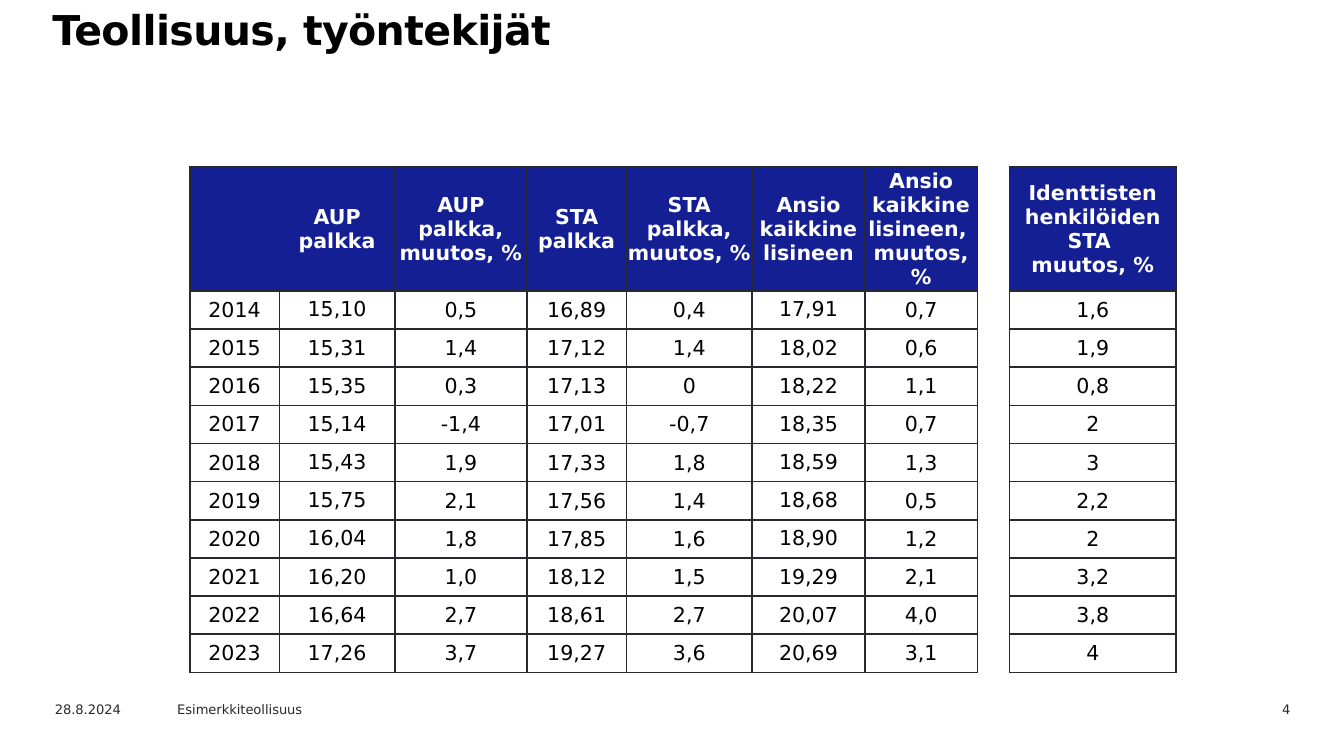
from dataclasses import dataclass

from lxml import etree
from pptx import Presentation
from pptx.dml.color import RGBColor
from pptx.enum.text import MSO_ANCHOR, MSO_AUTO_SIZE, PP_ALIGN
from pptx.oxml.ns import qn
from pptx.util import Emu, Inches, Pt

LEFT, CENTER, RIGHT = PP_ALIGN.LEFT, PP_ALIGN.CENTER, PP_ALIGN.RIGHT
TOP, MIDDLE = MSO_ANCHOR.TOP, MSO_ANCHOR.MIDDLE
NO_AUTOFIT = MSO_AUTO_SIZE.NONE

SLIDE_WIDTH = Inches(10)
SLIDE_HEIGHT = Emu(SLIDE_WIDTH * 9 // 16)
TITLE_ONLY = 5
FONT = "DejaVu Sans"
BLACK, WHITE, NAVY, GRAPHITE = "000000", "FFFFFF", "141F94", "29282E"
LINE_WIDTH = Pt(1)
TABLE_SIZE = Pt(11)
THIN_MARGIN = Pt(0.5)


@dataclass
class Frame:
    """A place on the slide, in percent of its width and height."""
    left: float
    top: float
    width: float
    height: float


@dataclass
class FooterItem:
    text: str
    left: float
    width: float
    align: PP_ALIGN = LEFT


TITLE_FRAME = Frame(2.8, -0.4, 87.4, 12.62)
FOOTER_TOP, FOOTER_HEIGHT = 91.91, 3.2
FOOTER = [
    FooterItem("4", 87.6, 9.4, RIGHT),
    FooterItem("28.8.2024", 3.1, 10),
    FooterItem("Esimerkkiteollisuus", 12.2, 14.2),
]

TABLE_FRAME = Frame(14.12, 22.04, 73.4, 66.84)
COLUMN_WIDTHS = [6.68, 8.58, 9.84, 7.4, 9.36, 8.38, 8.38, 2.4, 12.38]
HEADER_HEIGHT, ROW_HEIGHT = 9.78, 4.96
GAP_COLUMN = 7
PADDED_COLUMNS = (1, 5)
HEADERS = [
    "", "AUP palkka", "AUP palkka,\vmuutos, %", "STA palkka",
    "STA palkka,\vmuutos, %", "Ansio kaikkine\vlisineen",
    "Ansio kaikkine lisineen, \nmuutos, %", "",
    "Identtisten henkilöiden STA \nmuutos, %",
]
WAGES = [
    ["2014", "15,10", "0,5", "16,89", "0,4", "17,91", "0,7", "", "1,6"],
    ["2015", "15,31", "1,4", "17,12", "1,4", "18,02", "0,6", "", "1,9"],
    ["2016", "15,35", "0,3", "17,13", "0", "18,22", "1,1", "", "0,8"],
    ["2017", "15,14", "-1,4", "17,01", "-0,7", "18,35", "0,7", "", "2"],
    ["2018", "15,43", "1,9", "17,33", "1,8", "18,59", "1,3", "", "3"],
    ["2019", "15,75", "2,1", "17,56", "1,4", "18,68", "0,5", "", "2,2"],
    ["2020", "16,04", "1,8", "17,85", "1,6", "18,90", "1,2", "", "2"],
    ["2021", "16,20", "1,0", "18,12", "1,5", "19,29", "2,1", "", "3,2"],
    ["2022", "16,64", "2,7", "18,61", "2,7", "20,07", "4,0", "", "3,8"],
    ["2023", "17,26", "3,7", "19,27", "3,6", "20,69", "3,1", "", "4"],
]


def across(percent: float) -> int:
    return round(SLIDE_WIDTH * percent / 100)


def down(percent: float) -> int:
    return round(SLIDE_HEIGHT * percent / 100)


def lengths(frame: Frame) -> tuple[int, int, int, int]:
    return across(frame.left), down(frame.top), across(frame.width), down(frame.height)


def color(code: str) -> RGBColor:
    return RGBColor.from_string(code)


def set_all(target, values: dict) -> None:
    for name, value in values.items():
        setattr(target, name, value)


def format_text(text_frame, size: int, code: str, align: PP_ALIGN, bold: bool = False) -> None:
    for para in text_frame.paragraphs:
        para.alignment = align
        for span in para.runs:
            set_all(span.font, {"name": FONT, "size": size, "bold": bold})
            span.font.color.rgb = color(code)
        if not para.runs:  # an empty cell must not stretch its row
            etree.SubElement(para._p, qn("a:endParaRPr"), sz=str(size.centipoints))


def place_title(slide, text: str) -> None:
    box = slide.shapes.title
    set_all(box, dict(zip(("left", "top", "width", "height"), lengths(TITLE_FRAME))))
    text_frame = box.text_frame
    text_frame.text = text
    set_all(text_frame, {"auto_size": NO_AUTOFIT, "vertical_anchor": TOP, "word_wrap": True})
    format_text(text_frame, Pt(22), BLACK, LEFT, bold=True)
    para = text_frame.paragraphs[0]
    set_all(para, {"line_spacing": Pt(27), "space_before": Pt(0)})
    para._p.get_or_add_pPr().set("marL", str(Inches(0.01)))
    para.runs[0].font._element.set("spc", "-30")


def add_footer_item(slide, item: FooterItem) -> None:
    frame = Frame(item.left, FOOTER_TOP, item.width, FOOTER_HEIGHT)
    text_frame = slide.shapes.add_textbox(*lengths(frame)).text_frame
    text_frame.text = item.text
    text_frame.word_wrap = True
    format_text(text_frame, Pt(7), GRAPHITE, item.align)


def add_borders(cell, sides: str) -> None:
    """Draw the given sides out of L, R, T and B and leave the rest without a line."""
    properties = cell._tc.get_or_add_tcPr()
    for side in "LRTB":
        line = etree.SubElement(properties, qn(f"a:ln{side}"), w=str(LINE_WIDTH))
        if side in sides:
            fill = etree.SubElement(line, qn("a:solidFill"))
            etree.SubElement(fill, qn("a:srgbClr"), val=GRAPHITE)
        else:
            etree.SubElement(line, qn("a:noFill"))


def fill_cell(cell, text: str, row: int, column: int) -> None:
    is_header, is_gap = row == 0, column == GAP_COLUMN
    add_borders(cell, "LR" if is_gap else "LRTB")
    cell.fill.solid()
    cell.fill.fore_color.rgb = color(NAVY if is_header and not is_gap else WHITE)
    cell.vertical_anchor = MIDDLE
    if is_header or column not in PADDED_COLUMNS:
        set_all(cell, {"margin_left": THIN_MARGIN, "margin_right": THIN_MARGIN,
                       "margin_top": THIN_MARGIN, "margin_bottom": 0})
    cell.text_frame.text = text
    format_text(cell.text_frame, TABLE_SIZE, WHITE if is_header else BLACK, CENTER, is_header)


def add_wage_table(slide) -> None:
    rows = [HEADERS] + WAGES
    heights = [HEADER_HEIGHT] + [ROW_HEIGHT] * len(WAGES)
    holder = slide.shapes.add_table(len(rows), len(HEADERS), *lengths(TABLE_FRAME))
    table = holder.table
    set_all(table, {"first_row": False, "horz_banding": False})
    for table_column, width in zip(table.columns, COLUMN_WIDTHS):
        table_column.width = across(width)
    for table_row, height in zip(table.rows, heights):
        table_row.height = down(height)
    holder.height = down(TABLE_FRAME.height)
    for row, texts in enumerate(rows):
        for column, text in enumerate(texts):
            fill_cell(table.cell(row, column), text, row, column)


def main() -> None:
    deck = Presentation()
    set_all(deck, {"slide_width": SLIDE_WIDTH, "slide_height": SLIDE_HEIGHT})
    page = deck.slides.add_slide(deck.slide_layouts[TITLE_ONLY])
    place_title(page, "Teollisuus, työntekijät")
    for item in FOOTER:
        add_footer_item(page, item)
    add_wage_table(page)
    deck.save("out.pptx")


if __name__ == "__main__":
    main()
